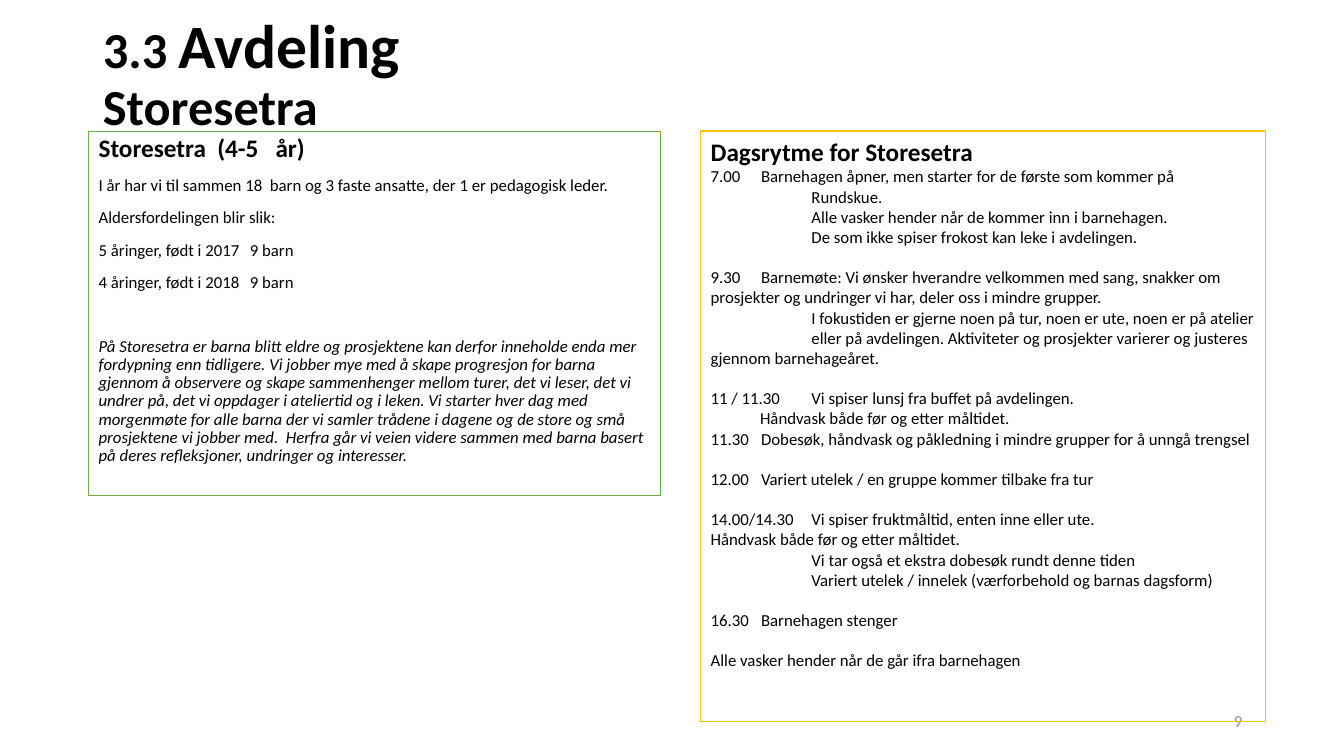
from lxml.etree import SubElement
from pptx import Presentation
from pptx.dml.color import RGBColor
from pptx.enum.shapes import MSO_SHAPE
from pptx.enum.text import MSO_ANCHOR, MSO_AUTO_SIZE, PP_ALIGN
from pptx.oxml.ns import qn
from pptx.util import Inches, Pt

COLORS = {"text": "000000", "number": "8C8C8C", "group": "70AD47", "day": "FFC000"}
HEADING = {"size": Pt(18), "bold": True}
BODY = {"size": Pt(12), "bold": False}
ITALIC = {**BODY, "italic": True}
PANEL_TOP = 1.3
TIME_COLUMN = 1.0
COUNT_COLUMN = 1.78
BLANK_LINE = 14.4


def add_span(para, text, style, color="text"):
    span = para.add_run()
    span.text = text
    span.font.name = "Calibri"
    span.font.color.rgb = RGBColor.from_string(COLORS[color])
    for name, value in style.items():
        setattr(span.font, name, value)


def add_lines(frame, lines, line_spacing, tab):
    """Write (text, style, space before in points, left indent in inches) rows."""
    for index, (text, style, before, indent) in enumerate(lines):
        para = frame.add_paragraph() if index else frame.paragraphs[0]
        para.alignment = PP_ALIGN.LEFT
        para.line_spacing = line_spacing
        para.space_before = Pt(before)
        add_span(para, text, style)
        props = para._p.get_or_add_pPr()
        props.set("marL", str(Inches(indent)))
        props.set("indent", "0")
        if "\t" in text:
            stops = SubElement(props, qn("a:tabLst"))
            SubElement(stops, qn("a:tab"), pos=str(Inches(tab)), algn="l")


deck = Presentation()
deck.slide_width, deck.slide_height = Inches(13.33), Inches(7.5)
page = deck.slides.add_slide(deck.slide_layouts[5])

# Title
title = page.shapes.title
title.left, title.top, title.width, title.height = map(Inches, (0.92, 0.4, 5.19, 0.71))
frame = title.text_frame
frame.word_wrap = True
frame.auto_size = MSO_AUTO_SIZE.NONE
frame.vertical_anchor = MSO_ANCHOR.MIDDLE
para = frame.paragraphs[0]
para.alignment = PP_ALIGN.LEFT
para.line_spacing = 0.9
for text, size in (("3.3 ", 36), ("Avdeling", 44), (" Storesetra", 36)):
    add_span(para, text, {"size": Pt(size), "bold": True})

# Page number
number = page.shapes.add_textbox(*map(Inches, (9.42, 6.95, 3, 0.4)))
number.text_frame.word_wrap = True
number.text_frame.vertical_anchor = MSO_ANCHOR.MIDDLE
number.text_frame.paragraphs[0].alignment = PP_ALIGN.RIGHT
add_span(number.text_frame.paragraphs[0], "9", BODY, "number")

# Panels
group_lines = [
    ("Storesetra  (4-5   år)", HEADING, 10, 0),
    ("I år har vi til sammen 18  barn og 3 faste ansatte, der 1 er pedagogisk leder.",
     BODY, 10, 0),
    ("Aldersfordelingen blir slik:", BODY, 10, 0),
    ("5 åringer, født i 2017\t9 barn", BODY, 10, 0),
    ("4 åringer, født i 2018\t9 barn", BODY, 10, 0),
    ("På Storesetra er barna blitt eldre og prosjektene kan derfor inneholde enda mer "
     "fordypning enn tidligere. Vi jobber mye med å skape progresjon for barna gjennom "
     "å observere og skape sammenhenger mellom turer, det vi leser, det vi undrer på, "
     "det vi oppdager i ateliertid og i leken. Vi starter hver dag med morgenmøte for "
     "alle barna der vi samler trådene i dagene og de store og små prosjektene vi "
     "jobber med.  Herfra går vi veien videre sammen med barna basert på deres "
     "refleksjoner, undringer og interesser.", ITALIC, 33, 0),
]

# Each block of the day is set off by one blank line: (text, left indent)
day_blocks = [
    [("7.00\tBarnehagen åpner, men starter for de første som kommer på", 0),
     ("Rundskue.", TIME_COLUMN),
     ("Alle vasker hender når de kommer inn i barnehagen.", TIME_COLUMN),
     ("De som ikke spiser frokost kan leke i avdelingen.", TIME_COLUMN)],
    [("9.30\tBarnemøte: Vi ønsker hverandre velkommen med sang, snakker "
      "om prosjekter og undringer vi har, deler oss i mindre grupper.", 0),
     ("I fokustiden er gjerne noen på tur, noen er ute, noen er på atelier "
      "eller på avdelingen. Aktiviteter og prosjekter varierer og justeres", TIME_COLUMN),
     ("gjennom barnehageåret.", 0)],
    [("11 / 11.30\tVi spiser lunsj fra buffet på avdelingen.", 0),
     ("Håndvask både før og etter måltidet.", 0.49),
     ("11.30\tDobesøk, håndvask og påkledning i mindre grupper for å unngå trengsel", 0)],
    [("12.00\tVariert utelek / en gruppe kommer tilbake fra tur", 0)],
    [("14.00/14.30\tVi spiser fruktmåltid, enten inne eller ute.", 0),
     ("Håndvask både før og etter måltidet.", 0),
     ("Vi tar også et ekstra dobesøk rundt denne tiden", TIME_COLUMN),
     ("Variert utelek / innelek (værforbehold og barnas dagsform)", TIME_COLUMN)],
    [("16.30\tBarnehagen stenger", 0)],
    [("Alle vasker hender når de går ifra barnehagen", 0)],
]
day_lines = [("Dagsrytme for Storesetra", HEADING, 0, 0)]
for block_index, block in enumerate(day_blocks):
    for line_index, (text, indent) in enumerate(block):
        before = BLANK_LINE if block_index and not line_index else 0
        day_lines.append((text, BODY, before, indent))

panels = [
    ("group", 0.88, 5.67, 3.62, group_lines, 0.9, COUNT_COLUMN),
    ("day", 6.95, 5.6, 5.86, day_lines, 1.0, TIME_COLUMN),
]
for color, left, width, height, lines, line_spacing, tab in panels:
    box = page.shapes.add_shape(
        MSO_SHAPE.RECTANGLE, *map(Inches, (left, PANEL_TOP, width, height)))
    box.shadow.inherit = False
    box.fill.background()
    box.line.color.rgb = RGBColor.from_string(COLORS[color])
    box.line.width = Pt(0.75)
    box.text_frame.word_wrap = True
    box.text_frame.vertical_anchor = MSO_ANCHOR.TOP
    add_lines(box.text_frame, lines, line_spacing, tab)

deck.save("out.pptx")
